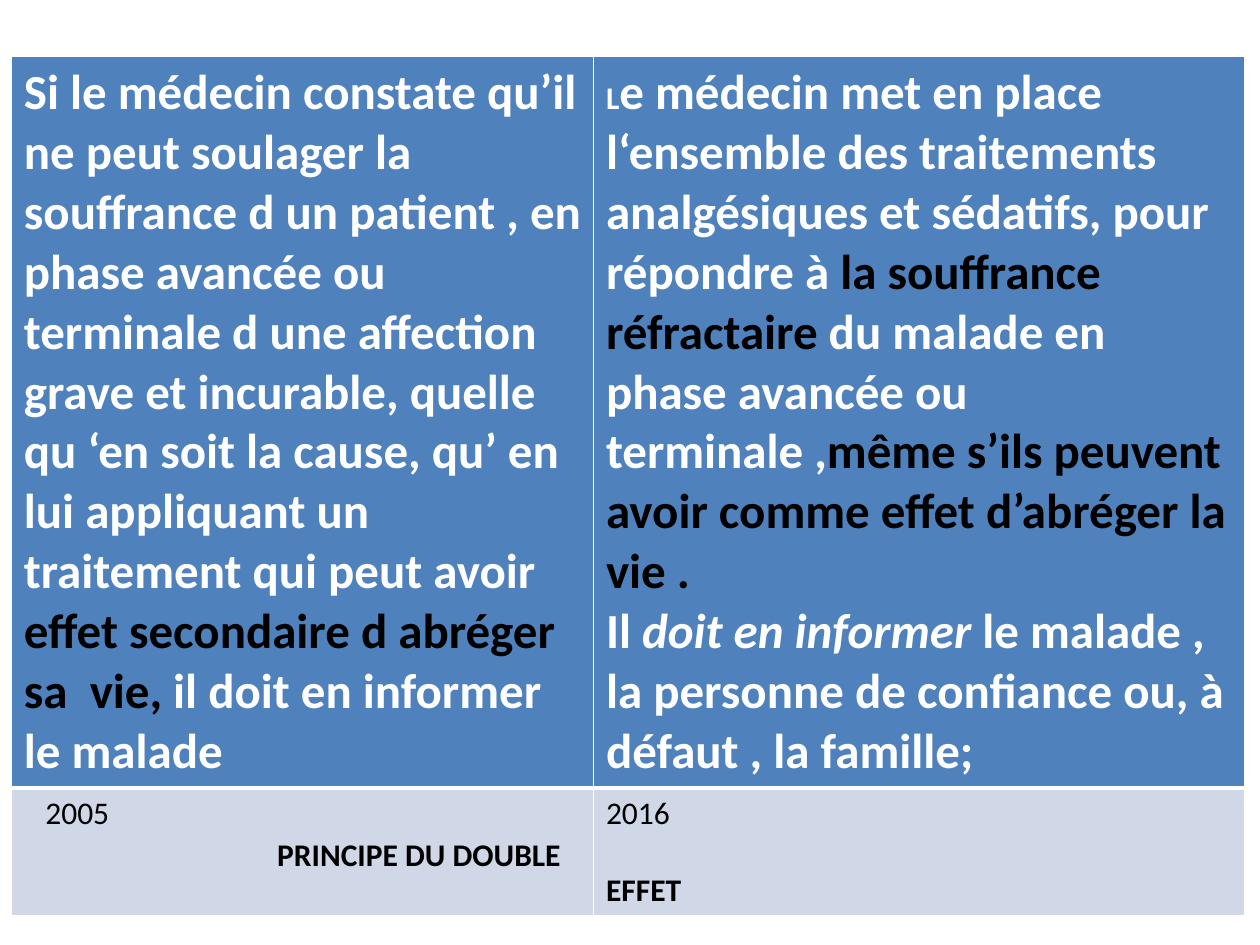
from dataclasses import dataclass

from lxml import etree
from pptx import Presentation
from pptx.dml.color import RGBColor
from pptx.oxml.ns import qn
from pptx.util import Inches, Pt


@dataclass(frozen=True)
class Theme:
    """Colours, font and type sizes of the slide."""
    font: str = "Calibri"
    white: str = "FFFFFF"
    black: str = "000000"
    header_fill: str = "4F81BD"
    body_fill: str = "D0D8E8"
    large: int = 28
    small: int = 18
    thin: int = 1
    thick: int = 3


@dataclass(frozen=True)
class Span:
    """A stretch of text in one style."""
    text: str
    color: str
    size: int
    bold: bool = True
    italic: bool = False


@dataclass(frozen=True)
class Para:
    """A paragraph with its indent in inches and space before in points."""
    spans: tuple
    indent: float = 0
    before: float = 0


THEME = Theme()


def law(text, color=THEME.white, size=THEME.large, italic=False):
    """Return a span of the header wording."""
    return Span(text, color, size, True, italic)


def note(text, bold, indent=0, before=0):
    """Return a one-span paragraph for the bottom row."""
    return Para((Span(text, THEME.black, THEME.small, bold),), indent, before)


LAW_2005 = (Para((
    law("Si le médecin constate qu’il ne peut soulager la souffrance d un patient , "
        "en phase avancée ou terminale d une affection grave et incurable, quelle "
        "qu ‘en soit la cause, qu’ en lui appliquant un traitement qui peut avoir "),
    law("effet secondaire d abréger sa  vie, ", THEME.black),
    law("il doit en informer le malade"),
)),)

LAW_2016 = (
    Para((
        law("L", size=THEME.small),
        law("e médecin met en place l‘ensemble des traitements analgésiques et "
            "sédatifs, pour répondre à"),
        law(" la souffrance réfractaire", THEME.black),
        law(" du malade en phase avancée ou terminale ,"),
        law("même s’ils peuvent avoir comme effet d’abréger la vie .", THEME.black),
    )),
    Para((
        law("Il "),
        law("doit en informer ", italic=True),
        law("le malade , la personne de confiance ou, à défaut , la famille;"),
    )),
)

YEAR_2005 = (note("2005", False, indent=0.17),
             note("PRINCIPE DU DOUBLE", True, indent=2.01, before=2.4))
YEAR_2016 = (note("2016", False), note("EFFET", True, before=22))

ROWS = (
    (5.78, THEME.header_fill, (LAW_2005, LAW_2016)),
    (0.99, THEME.body_fill, (YEAR_2005, YEAR_2016)),
)
COLUMN_WIDTHS = (4.62, 5.17)


def write_paragraph(paragraph, para):
    """Fill a paragraph with styled spans."""
    paragraph.font.name = THEME.font
    paragraph.space_before = Pt(para.before)
    properties = paragraph._p.get_or_add_pPr()
    properties.set("marL", str(Inches(para.indent)))
    properties.set("indent", "0")
    for span in para.spans:
        run = paragraph.add_run()
        run.text = span.text
        run.font.size = Pt(span.size)
        run.font.bold = span.bold
        run.font.italic = span.italic
        run.font.color.rgb = RGBColor.from_string(span.color)


def set_borders(cell, widths):
    """Draw white cell borders with widths for left, right, top and bottom."""
    properties = cell._tc.get_or_add_tcPr()
    for index, (side, width) in enumerate(zip("LRTB", widths)):
        line = etree.Element(qn(f"a:ln{side}"), w=str(Pt(width)))
        fill = etree.SubElement(line, qn("a:solidFill"))
        etree.SubElement(fill, qn("a:srgbClr"), val=THEME.white)
        properties.insert(index, line)


def write_cell(cell, fill, paras):
    """Fill a cell with its colour and paragraphs."""
    cell.fill.solid()
    cell.fill.fore_color.rgb = RGBColor.from_string(fill)
    frame = cell.text_frame
    for index, para in enumerate(paras):
        paragraph = frame.add_paragraph() if index else frame.paragraphs[0]
        write_paragraph(paragraph, para)


def add_law_table(page):
    """Add the table that compares the two laws."""
    height = sum(row[0] for row in ROWS)
    table = page.shapes.add_table(
        len(ROWS), len(COLUMN_WIDTHS), Inches(0.09), Inches(0.45),
        Inches(sum(COLUMN_WIDTHS)), Inches(height)).table
    for column, width in zip(table.columns, COLUMN_WIDTHS):
        column.width = Inches(width)
    for index, (row_height, fill, texts) in enumerate(ROWS):
        table.rows[index].height = Inches(row_height)
        top, bottom = (THEME.thick, THEME.thin) if index else (THEME.thin, THEME.thick)
        for cell, paras in zip(table.rows[index].cells, texts):
            write_cell(cell, fill, paras)
            set_borders(cell, (THEME.thin, THEME.thin, top, bottom))


def main():
    """Build and save the deck."""
    deck = Presentation()
    deck.slide_width, deck.slide_height = Inches(10), Inches(7.5)
    page = deck.slides.add_slide(deck.slide_layouts[6])
    add_law_table(page)
    deck.save("out.pptx")


if __name__ == "__main__":
    main()
